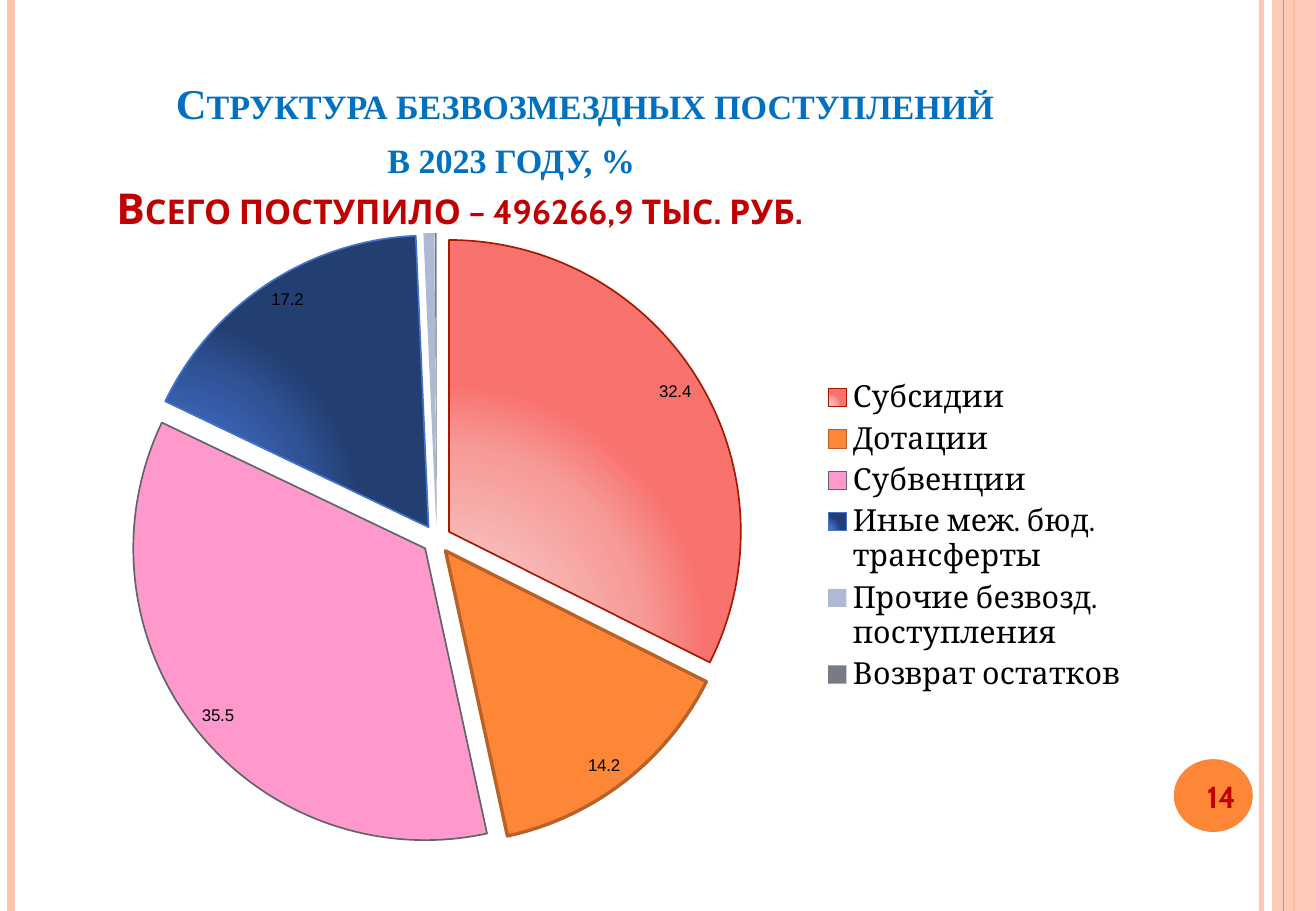
from pptx import Presentation
from pptx.chart.data import CategoryChartData
from pptx.dml.color import RGBColor
from pptx.enum.chart import XL_CHART_TYPE, XL_LABEL_POSITION, XL_LEGEND_POSITION
from pptx.enum.shapes import MSO_CONNECTOR, MSO_SHAPE
from pptx.enum.text import MSO_ANCHOR, PP_ALIGN
from pptx.oxml import parse_xml
from pptx.oxml.ns import nsdecls, qn
from pptx.util import Pt

PX = 9144  # 100 px to the inch
WIDTH, HEIGHT = 1083, 750

PEACH = RGBColor(0xFE, 0xC3, 0xAE)
ORANGE = RGBColor(0xFE, 0x86, 0x37)
BROWN = RGBColor(0xB9, 0x62, 0x28)
BLUE = RGBColor(0x00, 0x70, 0xC0)
RED = RGBColor(0xC0, 0x00, 0x00)
DARK_RED = RGBColor(0xA8, 0x18, 0x00)
PINK = RGBColor(0xFF, 0x99, 0xCC)
ROYAL = RGBColor(0x45, 0x74, 0xCC)
LAVENDER = RGBColor(0xAE, 0xBA, 0xD5)
GRAY = RGBColor(0x77, 0x7C, 0x84)
SLATE = RGBColor(0x5F, 0x64, 0x6E)
BLACK = RGBColor(0x00, 0x00, 0x00)

RED_GLOW = ((0, "F8C5C3"), (30, "F8BFBD"), (75, "F69B98"), (100, "F8736E"))
NAVY_GLOW = ((0, "4574CC"), (30, "4370C5"), (75, "2F5397"), (100, "233E70"))

# category, value, fill (colour or gradient stops), outline, outline width
SLICES = (
    ("Субсидии", 32.4, RED_GLOW, DARK_RED, 1),
    ("Дотации", 14.2, ORANGE, BROWN, 2),
    ("Субвенции", 35.5, PINK, SLATE, 1),
    ("Иные меж. бюд. трансферты", 17.2, NAVY_GLOW, ROYAL, 1),
    ("Прочие безвозд. поступления", 0.6, LAVENDER, None, 0),
    ("Возврат остатков", 0.1, GRAY, None, 0),
)
LABELLED = 4

# text, font, colour, left indent in px, space before in points
TITLE = (
    ("Структура безвозмездных поступлений", "Times New Roman", BLUE, 50, 0),
    ("в 2023 году, %", "Times New Roman", BLUE, 224, 2),
    ("Всего поступило – 496266,9 тыс. руб.", "Cabin", RED, 1, 0),
)


def px(*lengths):
    return [length * PX for length in lengths]


def set_alpha(sp, percent):
    for color in sp._element.spPr.iter(qn("a:srgbClr")):
        color.append(parse_xml(f'<a:alpha {nsdecls("a")} val="{percent * 1000}"/>'))


def add_rule(s, x, color, width, alpha=100):
    """Draw a vertical line over the full slide height."""
    sp = s.shapes.add_connector(MSO_CONNECTOR.STRAIGHT, *px(x, 0, x, HEIGHT))
    sp.line.color.rgb = color
    sp.line.width = Pt(width)
    sp._element.spPr.append(parse_xml(f'<a:effectLst {nsdecls("a")}/>'))
    if alpha < 100:
        set_alpha(sp, alpha)


def add_filled(s, preset, box, color):
    sp = s.shapes.add_shape(preset, *px(*box))
    sp.shadow.inherit = False
    sp.fill.solid()
    sp.fill.fore_color.rgb = color
    sp.line.fill.background()
    return sp


def add_text_frame(s, box, anchor):
    tf = s.shapes.add_textbox(*px(*box)).text_frame
    tf.word_wrap = True
    tf.vertical_anchor = anchor
    return tf


def add_run(p, text, font, size, color, indent):
    p._p.get_or_add_pPr().set("marL", str(indent * PX))
    r = p.add_run()
    r.text = text
    r.font.name = font
    r.font.size = Pt(size)
    r.font.bold = True
    r.font.color.rgb = color
    return r


def add_title(s):
    tf = add_text_frame(s, (85, 30, 830, 167), MSO_ANCHOR.BOTTOM)
    for i, (text, font, color, indent, before) in enumerate(TITLE):
        p = tf.add_paragraph() if i else tf.paragraphs[0]
        p.space_before = Pt(before)
        r = add_run(p, text, font, 25.2, color, indent)
        r.font._element.set("cap", "small")


def add_slide_number(s):
    add_filled(s, MSO_SHAPE.OVAL, (966, 625, 65, 60), ORANGE)
    p = add_text_frame(s, (963, 627, 72, 57), MSO_ANCHOR.MIDDLE).paragraphs[0]
    p.alignment = PP_ALIGN.CENTER
    add_run(p, "14", "Cabin", 18, RED, 12)


def radial_fill(stops):
    gs = "".join(f'<a:gs pos="{pos * 1000}"><a:srgbClr val="{color}"/></a:gs>'
                 for pos, color in stops)
    return parse_xml(
        f'<a:gradFill {nsdecls("a")} rotWithShape="1"><a:gsLst>{gs}</a:gsLst>'
        '<a:path path="circle"><a:fillToRect l="5000" t="100000" r="120000" b="10000"/>'
        '</a:path></a:gradFill>')


def set_layout(element, x, y, w, h, inner=False):
    """Place a plot area or legend by fractions of the chart."""
    for old in element.findall(qn("c:layout")):
        element.remove(old)
    target = '<c:layoutTarget val="inner"/>' if inner else ""
    layout = parse_xml(
        f'<c:layout {nsdecls("c")}><c:manualLayout>{target}'
        '<c:xMode val="edge"/><c:yMode val="edge"/>'
        f'<c:x val="{x}"/><c:y val="{y}"/><c:w val="{w}"/><c:h val="{h}"/>'
        '</c:manualLayout></c:layout>')
    if inner:
        element.insert(0, layout)
    else:
        element.find(qn("c:legendPos")).addnext(layout)


def style_slice(series, i, fill, outline, width):
    point = series.points[i]
    point.format.fill.solid()
    if isinstance(fill, RGBColor):
        point.format.fill.fore_color.rgb = fill
    else:
        spPr = series._element.findall(qn("c:dPt"))[i].find(qn("c:spPr"))
        spPr.replace(spPr.find(qn("a:solidFill")), radial_fill(fill))
    if outline is None:
        point.format.line.fill.background()
    else:
        point.format.line.color.rgb = outline
        point.format.line.width = Pt(width)
    if i < LABELLED:
        label = point.data_label
        label.font.name = "Arial"
        label.font.size = Pt(10)
        label.font.color.rgb = BLACK
        label.position = XL_LABEL_POSITION.INSIDE_END


def add_pie(s):
    data = CategoryChartData()
    data.categories = [row[0] for row in SLICES]
    data.add_series("Series 1", [row[1] for row in SLICES])
    chart = s.shapes.add_chart(XL_CHART_TYPE.PIE, *px(54, 175, 885, 533), data).chart
    chart.has_title = False
    chart.font.name = "Cambria"
    chart.font.size = Pt(18)
    chart.font.color.rgb = BLACK
    chart.has_legend = True
    chart.legend.position = XL_LEGEND_POSITION.RIGHT
    chart.legend.include_in_layout = False
    set_layout(chart.legend._element, 0.7, 0.25, 0.29, 0.5)
    plot = chart.plots[0]
    plot.vary_by_categories = True
    set_layout(plot._element.getparent(), 0.06, 0.03, 0.57, 0.95, inner=True)
    series = plot.series[0]
    series.data_labels.show_value = False
    for i, (_, _, fill, outline, width) in enumerate(SLICES):
        style_slice(series, i, fill, outline, width)
    series._element.find(qn("c:dPt")).addprevious(
        parse_xml(f'<c:explosion {nsdecls("c")} val="5"/>'))


def main():
    prs = Presentation()
    prs.slide_width, prs.slide_height = px(WIDTH, HEIGHT)
    s = prs.slides.add_slide(prs.slide_layouts[6])
    add_rule(s, 1038, PEACH, 3, alpha=93)
    add_rule(s, 9, PEACH, 4.5)
    add_rule(s, 1065, ORANGE, 1.5)
    band = add_filled(s, MSO_SHAPE.RECTANGLE, (1047, 0, 36, HEIGHT), PEACH)
    set_alpha(band, 87)
    add_rule(s, 1056, ORANGE, 0.75)
    add_title(s)
    add_pie(s)
    add_slide_number(s)
    prs.save("out.pptx")


if __name__ == "__main__":
    main()
